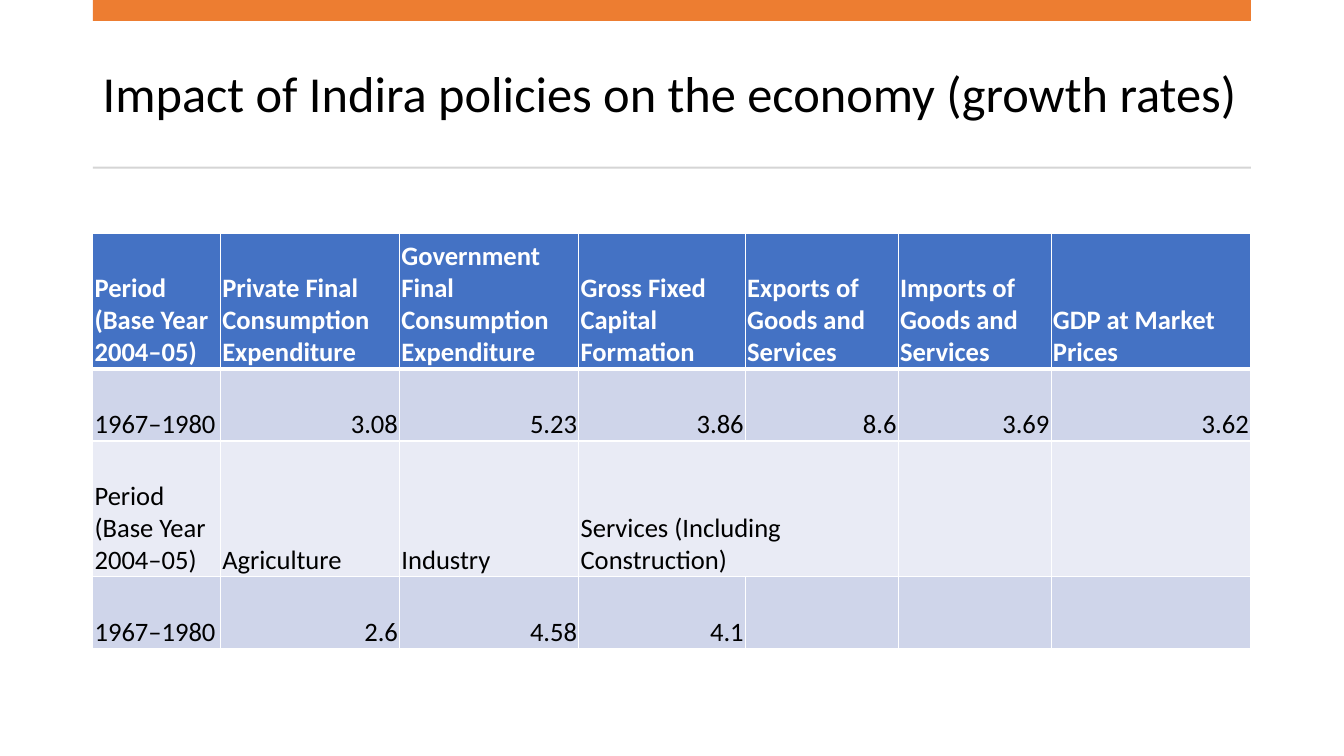
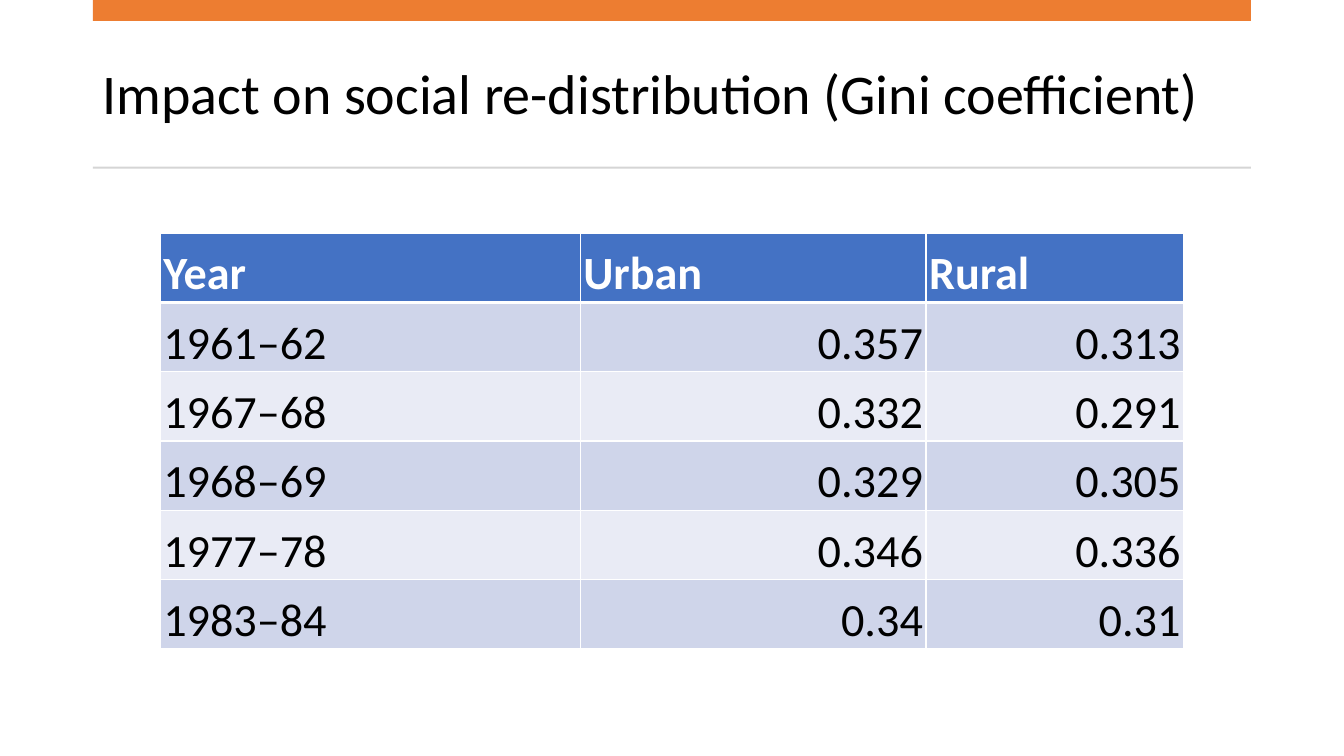
from lxml.etree import SubElement
from pptx import Presentation
from pptx.dml.color import RGBColor
from pptx.enum.shapes import MSO_SHAPE
from pptx.enum.text import MSO_ANCHOR, PP_ALIGN
from pptx.oxml.ns import qn
from pptx.util import Pt

COLORS = {
    "text": "000000",
    "white": "FFFFFF",
    "accent": "ED7D31",
    "rule": "D5D5D5",
    "header": "4472C4",
    "band_dark": "CFD5EA",
    "band_light": "E9EBF5",
}
FONT = "Calibri"
LEFT, WIDTH = 66.3, 827.2
TABLE_TOP = 166.5

GROWTH_ROWS = [
    ["Period (Base Year 2004–05)", "Private Final Consumption Expenditure",
     "Government Final Consumption Expenditure", "Gross Fixed Capital Formation",
     "Exports of Goods and Services", "Imports of Goods and Services",
     "GDP at Market Prices"],
    ["1967–1980", 3.08, 5.23, 3.86, 8.6, 3.69, 3.62],
    ["Period (Base Year 2004–05)", "Agriculture", "Industry",
     "Services (Including Construction)", None, None, None],
    ["1967–1980", 2.6, 4.58, 4.1, None, None, None],
]
GINI_ROWS = [
    ["Year", "Urban", "Rural"],
    ["1961–62", 0.357, 0.313],
    ["1967–68", 0.332, 0.291],
    ["1968–69", 0.329, 0.305],
    ["1977–78", 0.346, 0.336],
    ["1983–84", 0.34, 0.31],
]


def rgb(name):
    return RGBColor.from_string(COLORS[name])


def style_font(p, size, color, bold=False):
    p.font.name = FONT
    p.font.size = Pt(size)
    p.font.bold = bold
    p.font.color.rgb = rgb(color)


def add_bar(s, top, height, color):
    bar = s.shapes.add_shape(MSO_SHAPE.RECTANGLE, Pt(LEFT), Pt(top), Pt(WIDTH), Pt(height))
    bar.shadow.inherit = False
    bar.fill.solid()
    bar.fill.fore_color.rgb = rgb(color)
    bar.line.fill.background()


def add_title(s, text, size):
    tf = s.shapes.add_textbox(Pt(LEFT), Pt(26.5), Pt(WIDTH), Pt(85)).text_frame
    tf.word_wrap = True
    tf.vertical_anchor = MSO_ANCHOR.MIDDLE
    p = tf.paragraphs[0]
    p.text = text
    p.line_spacing = 0.9
    style_font(p, size, "text")


def add_titled_slide(prs, title, size):
    s = prs.slides.add_slide(prs.slide_layouts[6])
    add_title(s, title, size)
    add_bar(s, 0, 15, "accent")
    add_bar(s, 119, 1.4, "rule")
    return s


def set_borders(cell, top, bottom):
    """Draw white borders; must run before the cell's fill is set."""
    tc_pr = cell._tc.get_or_add_tcPr()
    for side, width in (("L", 1), ("R", 1), ("T", top), ("B", bottom)):
        ln = SubElement(tc_pr, qn(f"a:ln{side}"), w=str(Pt(width)))
        fill = SubElement(ln, qn("a:solidFill"))
        SubElement(fill, qn("a:srgbClr"), val=COLORS["white"])


def fill_cell(cell, value, row, size, inset):
    header = row == 0
    set_borders(cell, 3 if row == 1 else 1, 3 if header else 1)
    cell.fill.solid()
    band = "band_dark" if row % 2 else "band_light"
    cell.fill.fore_color.rgb = rgb("header" if header else band)
    if value is None:
        return
    cell.vertical_anchor = MSO_ANCHOR.BOTTOM
    cell.margin_left = cell.margin_right = cell.margin_top = Pt(inset)
    cell.margin_bottom = 0
    p = cell.text_frame.paragraphs[0]
    p.text = str(value)
    p.alignment = PP_ALIGN.RIGHT if isinstance(value, float) else PP_ALIGN.LEFT
    style_font(p, size, "white" if header else "text", header)


def add_data_table(s, left, rows, widths, heights, size, inset):
    table = s.shapes.add_table(len(rows), len(widths), Pt(left), Pt(TABLE_TOP),
                               Pt(sum(widths)), Pt(sum(heights))).table
    for column, width in zip(table.columns, widths):
        column.width = Pt(width)
    for i, (values, height) in enumerate(zip(rows, heights)):
        table.rows[i].height = Pt(height)
        for j, value in enumerate(values):
            fill_cell(table.cell(i, j), value, i, size, inset)
    return table


def main():
    prs = Presentation()
    prs.slide_width, prs.slide_height = Pt(960), Pt(540)

    s = add_titled_slide(prs, "Impact of Indira policies on the economy (growth rates)", 36)
    table = add_data_table(s, LEFT, GROWTH_ROWS, [91.2, 128, 128, 119, 109.2, 109.2, 142.4],
                           [97, 51.5] * 2, 19, 1.3)
    table.cell(2, 3).merge(table.cell(2, 4))

    s = add_titled_slide(prs, "Impact on social re-distribution (Gini coefficient)", 40)
    add_data_table(s, 114.5, GINI_ROWS, [300, 247, 184], [49.5] * len(GINI_ROWS), 33, 2.2)

    prs.save("out.pptx")


if __name__ == "__main__":
    main()
